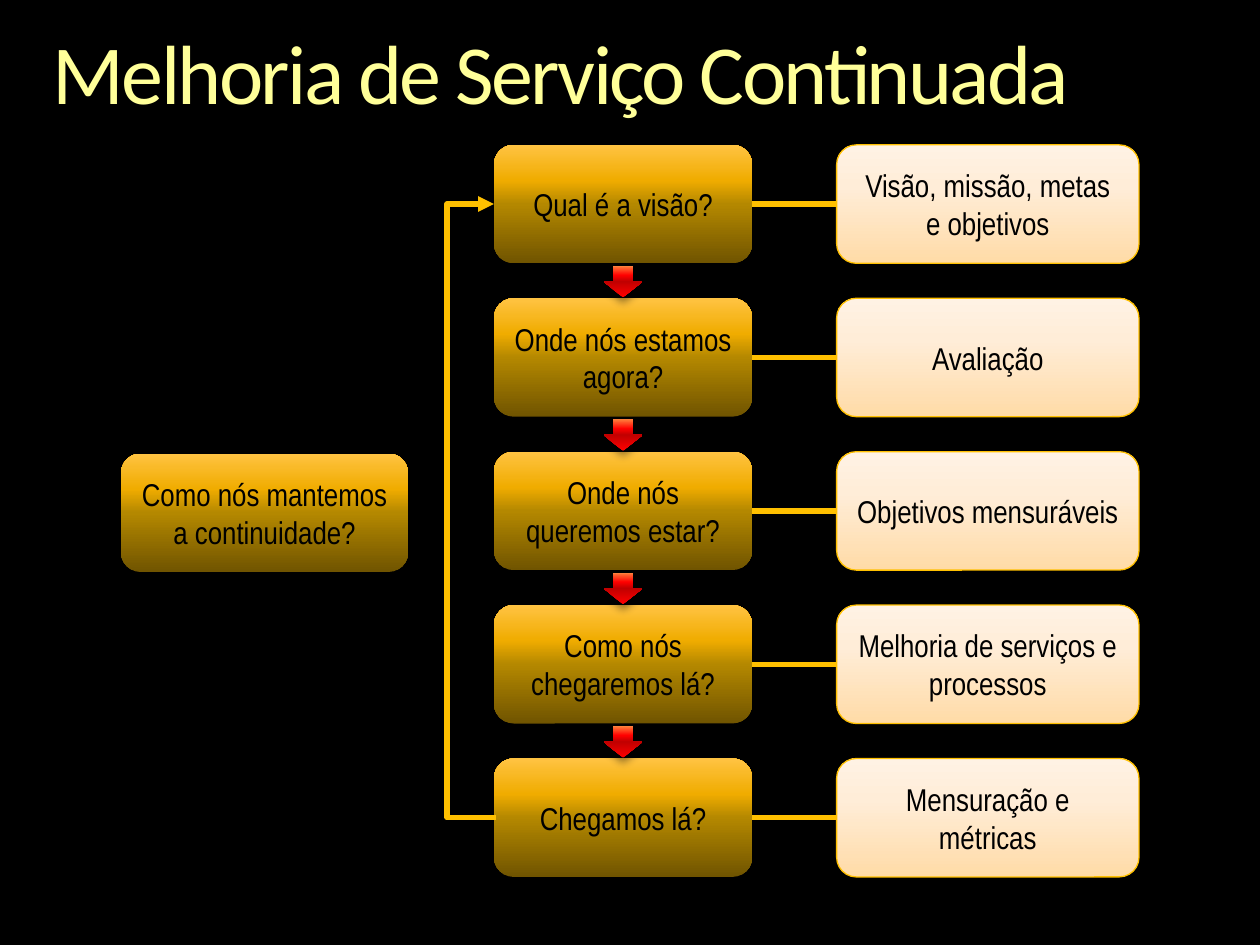
from lxml.etree import SubElement
from pptx import Presentation
from pptx.dml.color import RGBColor
from pptx.enum.shapes import MSO_CONNECTOR, MSO_SHAPE
from pptx.enum.text import MSO_ANCHOR, PP_ALIGN
from pptx.oxml import parse_xml
from pptx.oxml.ns import nsdecls, qn
from pptx.util import Inches, Pt

TITLE = "Melhoria de Serviço Continuada"
CONTINUITY = "Como nós mantemos a continuidade?"
STEPS = [
    ("Qual é a visão?", "Visão, missão, metas e objetivos"),
    ("Onde nós estamos agora?", "Avaliação"),
    ("Onde nós queremos estar?", "Objetivos mensuráveis"),
    ("Como nós chegaremos lá?", "Melhoria de serviços e processos"),
    ("Chegamos lá?", "Mensuração e métricas"),
]

COLORS = {"background": "000000", "text": "000000", "line": "FFC000", "shadow": "000000"}
# Gradient stops: position in percent, colour
GRADIENTS = {
    "title": [(0, "FFFFB9"), (36, "FFFF99"), (86, "F6AE1E")],
    "question": [(0, "705400"), (50, "B48800"), (70, "F0AC00"), (100, "FFC342")],
    "answer": [(0, "FFDBA7"), (65, "FFEDD8"), (100, "FFF2E4")],
    "arrow": [(0, "FF0000"), (50, "C00000"), (70, "FF0000"), (100, "FF803C")],
}
SHADOWS = {"question": (45, 5, 3), "answer": (35, 4, 3), "arrow": (45, 5, 3)}

QUESTION_LEFT, QUESTION_WIDTH = 3.92, 2.05
ANSWER_LEFT, ANSWER_WIDTH = 6.64, 2.4
BOX_HEIGHT = 0.94
FIRST_TOP, LAST_TOP = 1.15, 6.02
ROW_STEP = (LAST_TOP - FIRST_TOP) / (len(STEPS) - 1)
ARROW_WIDTH, ARROW_HEIGHT, ARROW_GAP = 0.31, 0.25, 0.02
LOOP_LEFT, LOOP_START = 3.55, 3.94


def gradient_element(name, angle):
    stops = "".join(
        f'<a:gs pos="{position * 1000}"><a:srgbClr val="{color}"/></a:gs>'
        for position, color in GRADIENTS[name]
    )
    return parse_xml(
        f'<a:gradFill {nsdecls("a")} rotWithShape="1"><a:gsLst>{stops}</a:gsLst>'
        f'<a:lin ang="{angle * 60000}" scaled="0"/></a:gradFill>'
    )


def add_shadow(shape, opacity, blur, distance):
    shape.shadow.inherit = False
    effects = shape._element.spPr.find(qn("a:effectLst"))
    shadow = SubElement(
        effects, qn("a:outerShdw"), blurRad=str(Pt(blur)), dist=str(Pt(distance)),
        dir="5400000", rotWithShape="0",
    )
    color = SubElement(shadow, qn("a:srgbClr"), val=COLORS["shadow"])
    SubElement(color, qn("a:alpha"), val=str(opacity * 1000))


def add_gradient_shape(slide, preset, style, left, top, width, height):
    shape = slide.shapes.add_shape(
        preset, Inches(left), Inches(top), Inches(width), Inches(height)
    )
    shape._element.spPr.find(qn("a:prstGeom")).addnext(gradient_element(style, 270))
    shape.line.fill.background()
    add_shadow(shape, *SHADOWS[style])
    return shape


def add_box(slide, text, style, left, top, width):
    box = add_gradient_shape(
        slide, MSO_SHAPE.ROUNDED_RECTANGLE, style, left, top, width, BOX_HEIGHT
    )
    if style == "answer":
        style_line(box.line, 0.75)
    frame = box.text_frame
    frame.word_wrap = True
    frame.vertical_anchor = MSO_ANCHOR.MIDDLE
    paragraph = frame.paragraphs[0]
    paragraph.alignment = PP_ALIGN.CENTER
    run = paragraph.add_run()
    run.text = text
    run.font.name = "Arial Narrow"
    run.font.size = Pt(18)
    run.font.color.rgb = RGBColor.from_string(COLORS["text"])


def style_line(line, width):
    line.color.rgb = RGBColor.from_string(COLORS["line"])
    line.width = Pt(width)


def add_line(slide, kind, start, end):
    connector = slide.shapes.add_connector(kind, *map(Inches, start + end))
    style_line(connector.line, 3)
    SubElement(connector._element.spPr, qn("a:effectLst"))
    return connector


def add_title(slide):
    box = slide.shapes.add_textbox(Inches(0.42), Inches(0.25), Inches(9.17), Inches(0.73))
    frame = box.text_frame
    frame.word_wrap = True
    frame.margin_left = frame.margin_right = frame.margin_top = frame.margin_bottom = 0
    paragraph = frame.paragraphs[0]
    paragraph.line_spacing = 0.9
    run = paragraph.add_run()
    run.text = TITLE
    run.font.name = "Calibri"
    run.font.size = Pt(48)
    properties = run.font._element
    properties.set("spc", "-150")
    properties.insert(0, gradient_element("title", 90))


def add_loop(slide):
    """Lead from the last question back to the first one."""
    middle = BOX_HEIGHT / 2
    loop = add_line(
        slide, MSO_CONNECTOR.ELBOW,
        (LOOP_START, LAST_TOP + middle), (QUESTION_LEFT, FIRST_TOP + middle),
    )
    bend = (LOOP_START - LOOP_LEFT) / (LOOP_START - QUESTION_LEFT)
    adjustments = loop._element.spPr.find(qn("a:prstGeom")).get_or_add_avLst()
    SubElement(adjustments, qn("a:gd"), name="adj1", fmla=f"val {round(bend * 100000)}")
    SubElement(loop.line._get_or_add_ln(), qn("a:tailEnd"), type="triangle")


def main():
    presentation = Presentation()
    presentation.slide_width, presentation.slide_height = Inches(10), Inches(7.5)
    slide = presentation.slides.add_slide(presentation.slide_layouts[6])
    slide.background.fill.solid()
    slide.background.fill.fore_color.rgb = RGBColor.from_string(COLORS["background"])

    add_title(slide)
    add_box(slide, CONTINUITY, "question", 0.96, 3.6, 2.28)
    tops = [FIRST_TOP + row * ROW_STEP for row in range(len(STEPS))]
    for top, (question, answer) in zip(tops, STEPS):
        add_box(slide, question, "question", QUESTION_LEFT, top, QUESTION_WIDTH)
        add_box(slide, answer, "answer", ANSWER_LEFT, top, ANSWER_WIDTH)
        middle = top + BOX_HEIGHT / 2
        add_line(
            slide, MSO_CONNECTOR.STRAIGHT,
            (QUESTION_LEFT + QUESTION_WIDTH, middle), (ANSWER_LEFT, middle),
        )
    arrow_left = QUESTION_LEFT + (QUESTION_WIDTH - ARROW_WIDTH) / 2
    for top in tops[:-1]:
        add_gradient_shape(
            slide, MSO_SHAPE.DOWN_ARROW, "arrow", arrow_left,
            top + BOX_HEIGHT + ARROW_GAP, ARROW_WIDTH, ARROW_HEIGHT,
        )
    add_loop(slide)
    presentation.save("out.pptx")


if __name__ == "__main__":
    main()
